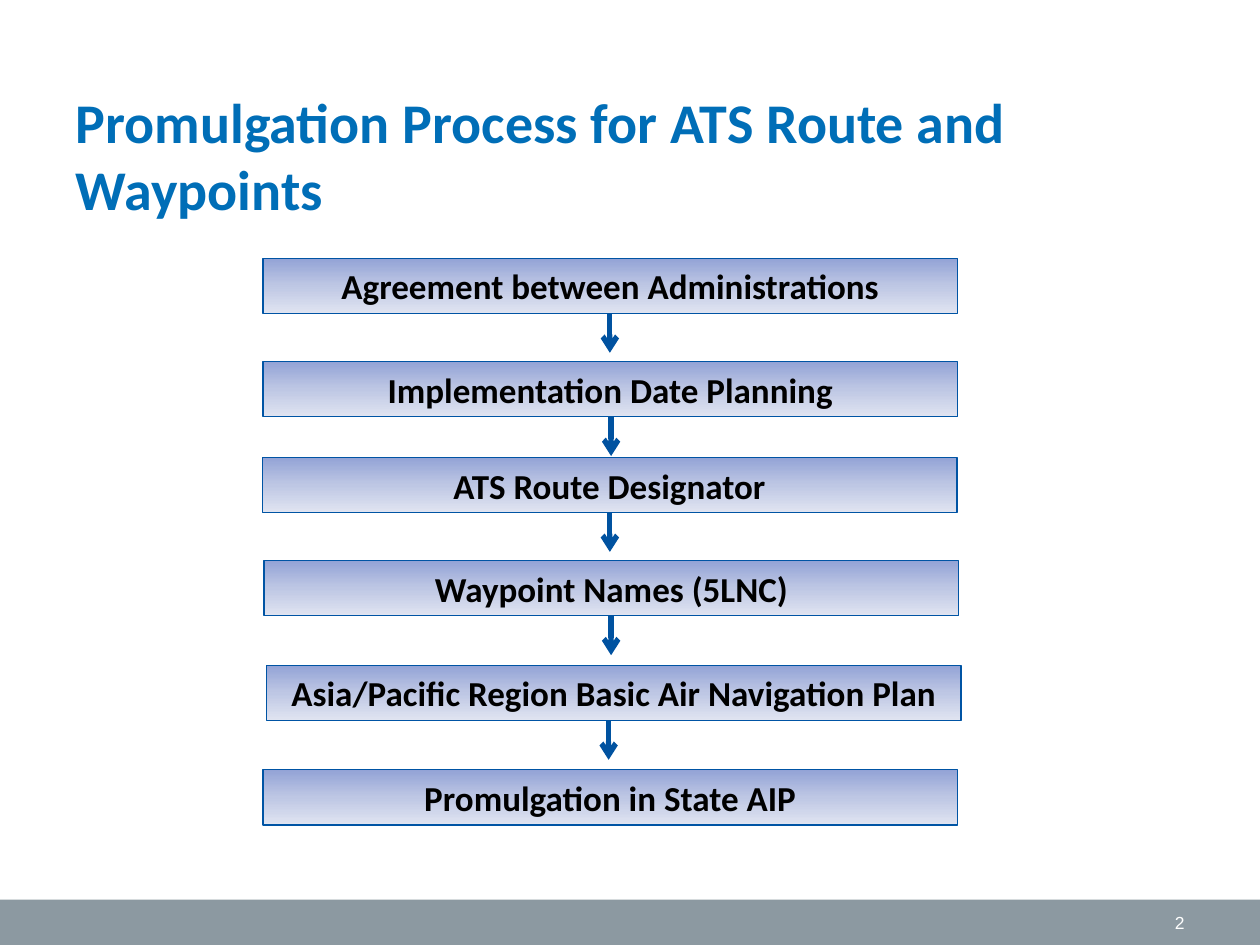
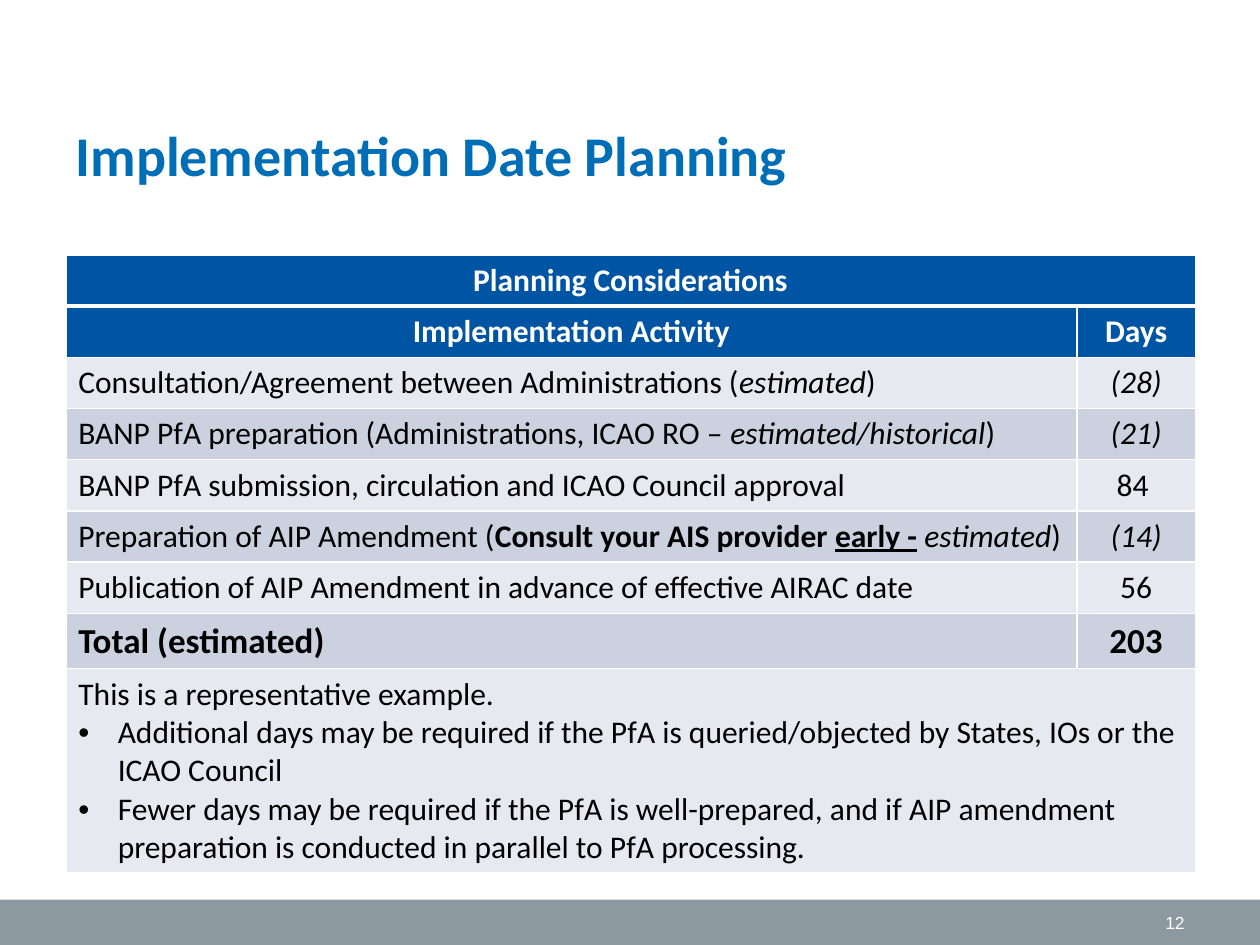
from copy import deepcopy

from lxml.etree import SubElement
from pptx import Presentation
from pptx.dml.color import RGBColor
from pptx.enum.shapes import MSO_CONNECTOR, MSO_SHAPE
from pptx.enum.text import MSO_ANCHOR, PP_ALIGN
from pptx.oxml.ns import qn
from pptx.util import Pt

WHITE = RGBColor(0xFF, 0xFF, 0xFF)
BLACK = RGBColor(0, 0, 0)
TITLE_BLUE = RGBColor(0x00, 0x6E, 0xB7)
DEEP_BLUE = RGBColor(0x00, 0x54, 0xA4)
ARROW_BLUE = RGBColor(0x00, 0x52, 0xA0)
BAND_GREY = RGBColor(0x8C, 0x99, 0xA1)
ROW_LIGHT = RGBColor(0xE7, 0xE9, 0xF0)
ROW_DARK = RGBColor(0xCC, 0xD1, 0xE0)
STEP_GRADIENT = [
    (0, RGBColor(0x93, 0xA3, 0xD6)),
    (0.5, RGBColor(0xBE, 0xC7, 0xE4)),
    (1, RGBColor(0xE0, 0xE4, 0xF1)),
]

SLIDE_WIDTH, SLIDE_HEIGHT = 720, 540
BAND_TOP = 514
BAND_HEIGHT = SLIDE_HEIGHT - BAND_TOP
STEP_WIDTH, STEP_HEIGHT = 397, 31.5
ARROW_LENGTH = 22.5

STEPS = [
    ("Agreement between Administrations", 150.2, 147.6, 348.5),
    ("Implementation Date Planning", 150.2, 206.6, 349.2),
    ("ATS Route Designator", 149.8, 261.4, 348.5),
    ("Waypoint Names (5LNC)", 150.9, 320.4, 349.2),
    ("Asia/Pacific Region Basic Air Navigation Plan", 152.2, 380.2, 347.8),
    ("Promulgation in State AIP", 150.2, 439.9, None),
]

ACTIVITIES = [
    ([("Consultation/Agreement between Administrations (", ""), ("estimated", "i"), (")", "")],
     [("(28)", "i")]),
    ([("BANP PfA preparation (Administrations, ICAO RO – ", ""),
      ("estimated/historical", "i"), (")", "")],
     [("(21)", "i")]),
    ([("BANP PfA submission, circulation and ICAO Council approval", "")], [("84 ", "")]),
    ([("Preparation of AIP Amendment (", ""), ("Consult your AIS provider ", "b"),
      ("early -", "bu"), (" ", ""), ("estimated", "i"), (")", "")],
     [("(14)", "i")]),
    ([("Publication of AIP Amendment in advance of effective AIRAC date", "")], [("56", "")]),
]
NOTE_LEAD = "This is a representative example."
NOTE_BULLETS = [
    "Additional days may be required if the PfA is queried/objected by States, IOs or the "
    "ICAO Council",
    "Fewer days may be required if the PfA is well-prepared, and if AIP amendment "
    "preparation is conducted in parallel to PfA processing.",
]
COLUMN_WIDTHS = [577.8, 67.7]
ROW_HEIGHTS = [29.3] * 7 + [31.6, 116.8]


def format_paragraph(paragraph, size, color, alignment=PP_ALIGN.LEFT, bold=False, name="Calibri"):
    paragraph.alignment = alignment
    font = paragraph.font
    font.name = name
    font.size = Pt(size)
    font.bold = bold
    font.color.rgb = color


def add_box(slide, left, top, width, height):
    shape = slide.shapes.add_shape(
        MSO_SHAPE.RECTANGLE, Pt(left), Pt(top), Pt(width), Pt(height))
    shape.shadow.inherit = False
    return shape


def add_titled_slide(presentation, title_text, number):
    slide = presentation.slides.add_slide(presentation.slide_layouts[5])
    title = slide.shapes.title
    title.left, title.top, title.width, title.height = Pt(36), Pt(43.2), Pt(648), Pt(90)
    title.text_frame.text = title_text
    title.text_frame.vertical_anchor = MSO_ANCHOR.MIDDLE
    format_paragraph(title.text_frame.paragraphs[0], 32, TITLE_BLUE, bold=True)

    band = add_box(slide, 0, BAND_TOP, SLIDE_WIDTH, BAND_HEIGHT)
    band.fill.solid()
    band.fill.fore_color.rgb = BAND_GREY
    band.line.fill.background()

    number_box = slide.shapes.add_textbox(Pt(516), Pt(BAND_TOP), Pt(168), Pt(BAND_HEIGHT))
    frame = number_box.text_frame
    frame.word_wrap = True
    frame.vertical_anchor = MSO_ANCHOR.MIDDLE
    frame.text = number
    format_paragraph(frame.paragraphs[0], 10, WHITE, PP_ALIGN.RIGHT, name="Arial")
    return slide


def add_step(slide, text, left, top):
    shape = add_box(slide, left, top, STEP_WIDTH, STEP_HEIGHT)
    shape.fill.gradient()
    shape.fill.gradient_angle = 270
    stop_list = shape.element.spPr.find(".//" + qn("a:gsLst"))
    stop_list.insert(1, deepcopy(stop_list[0]))
    for stop, (position, color) in zip(shape.fill.gradient_stops, STEP_GRADIENT):
        stop.position = position
        stop.color.rgb = color
    shape.line.color.rgb = DEEP_BLUE
    shape.line.width = Pt(0.75)
    shape.text_frame.text = text
    format_paragraph(shape.text_frame.paragraphs[0], 20, BLACK, PP_ALIGN.CENTER, bold=True)


def add_down_arrow(slide, x, top):
    arrow = slide.shapes.add_connector(
        MSO_CONNECTOR.STRAIGHT, Pt(x), Pt(top), Pt(x), Pt(top + ARROW_LENGTH))
    arrow.line.color.rgb = ARROW_BLUE
    arrow.line.width = Pt(3)
    SubElement(arrow.line._get_or_add_ln(), qn("a:tailEnd"), type="arrow")
    SubElement(arrow.element.spPr, qn("a:effectLst"))


def style_cell(cell, fill_color, bottom_width=1, top_width=1):
    properties = cell._tc.get_or_add_tcPr()
    borders = {"a:lnL": 1, "a:lnR": 1, "a:lnT": top_width, "a:lnB": bottom_width}
    for tag, width in borders.items():
        border = SubElement(properties, qn(tag), w=str(Pt(width)))
        fill = SubElement(border, qn("a:solidFill"))
        SubElement(fill, qn("a:srgbClr"), val=str(WHITE))
    cell.fill.solid()
    cell.fill.fore_color.rgb = fill_color


def write_cell(cell, runs, size=18, color=BLACK, alignment=PP_ALIGN.LEFT, bold=False):
    paragraph = cell.text_frame.paragraphs[0]
    format_paragraph(paragraph, size, color, alignment, bold)
    for text, style in runs:
        run = paragraph.add_run()
        run.text = text
        run.font.name = "Calibri"
        run.font.size = Pt(size)
        run.font.color.rgb = color
        run.font.bold = bold or "b" in style
        run.font.italic = "i" in style
        run.font.underline = "u" in style


def add_bullet(cell, text):
    paragraph = cell.text_frame.add_paragraph()
    paragraph.text = text
    properties = paragraph._p.get_or_add_pPr()
    properties.set("marL", str(Pt(22.5)))
    properties.set("indent", str(Pt(-22.5)))
    SubElement(properties, qn("a:buFont"), typeface="Arial")
    SubElement(properties, qn("a:buChar"), char="•")
    format_paragraph(paragraph, 18, BLACK)


def add_planning_table(slide):
    frame = slide.shapes.add_table(
        len(ROW_HEIGHTS), len(COLUMN_WIDTHS), Pt(37.6), Pt(145.6),
        Pt(sum(COLUMN_WIDTHS)), Pt(sum(ROW_HEIGHTS)))
    table = frame.table
    for column, width in zip(table.columns, COLUMN_WIDTHS):
        column.width = Pt(width)
    last_row = len(ROW_HEIGHTS) - 1
    for index, (row, height) in enumerate(zip(table.rows, ROW_HEIGHTS)):
        row.height = Pt(height)
        color = DEEP_BLUE if index < 2 else (ROW_LIGHT, ROW_DARK)[index % 2]
        for cell in row.cells:
            style_cell(cell, color, 3 if index == 0 else 1, 3 if index == 1 else 1)
    for index in (0, last_row):
        table.cell(index, 0).merge(table.cell(index, 1))

    headings = [(0, 0, "Planning Considerations"), (1, 0, "Implementation Activity"), (1, 1, "Days")]
    for row, column, text in headings:
        write_cell(table.cell(row, column), [(text, "")], 18, WHITE, PP_ALIGN.CENTER, True)
    for row, (activity, days) in enumerate(ACTIVITIES, start=2):
        write_cell(table.cell(row, 0), activity)
        write_cell(table.cell(row, 1), days, alignment=PP_ALIGN.CENTER)
    total_row = last_row - 1
    write_cell(table.cell(total_row, 0), [("Total (estimated)", "")], 20, bold=True)
    write_cell(table.cell(total_row, 1), [("203", "")], 20, alignment=PP_ALIGN.CENTER, bold=True)
    note = table.cell(last_row, 0)
    write_cell(note, [(NOTE_LEAD, "")])
    for text in NOTE_BULLETS:
        add_bullet(note, text)


def main():
    presentation = Presentation()
    presentation.slide_width = Pt(SLIDE_WIDTH)
    presentation.slide_height = Pt(SLIDE_HEIGHT)

    process_slide = add_titled_slide(
        presentation, "Promulgation Process for ATS Route and Waypoints", "2")
    for text, left, top, arrow_x in STEPS:
        add_step(process_slide, text, left, top)
        if arrow_x is not None:
            add_down_arrow(process_slide, arrow_x, top + STEP_HEIGHT)

    planning_slide = add_titled_slide(presentation, "Implementation Date Planning", "12")
    add_planning_table(planning_slide)
    presentation.save("out.pptx")


if __name__ == "__main__":
    main()
